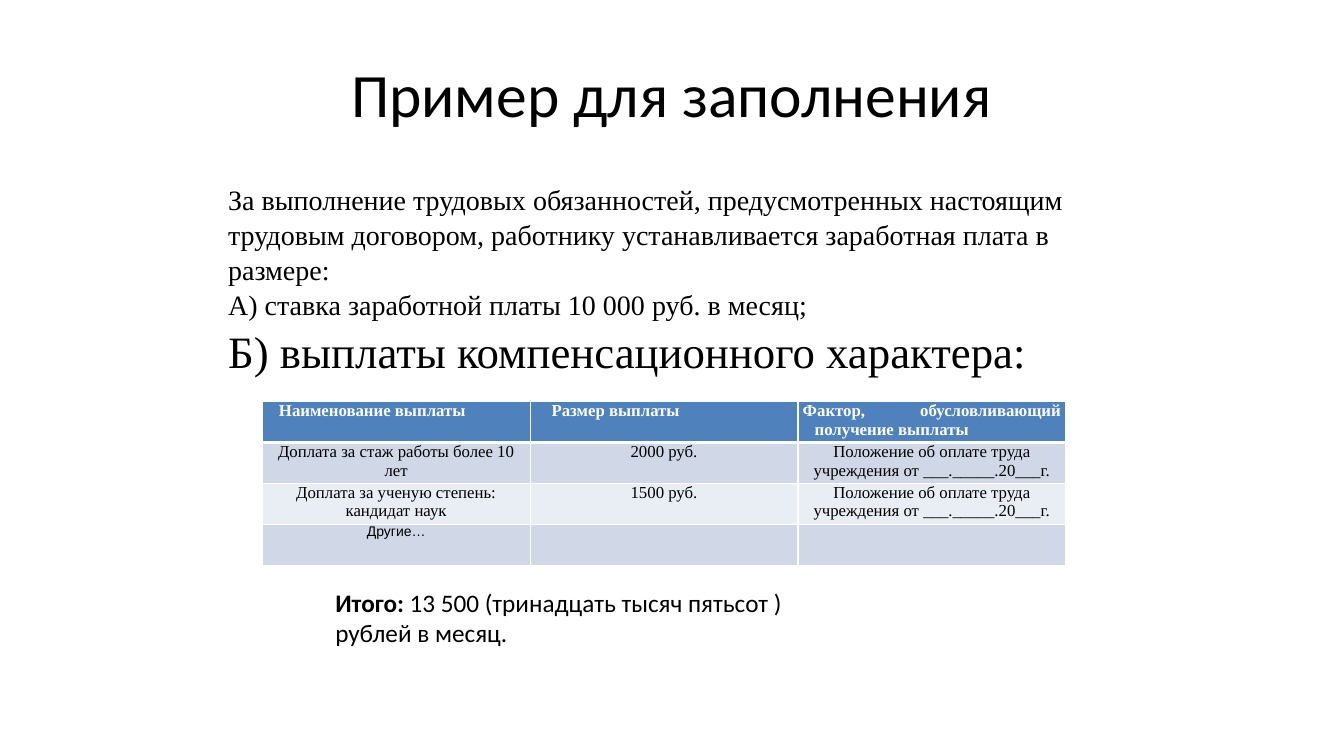
from lxml import etree
from pptx import Presentation
from pptx.dml.color import RGBColor
from pptx.enum.text import MSO_ANCHOR, PP_ALIGN
from pptx.oxml.ns import qn
from pptx.util import Cm, Pt

LEFT, CENTER, JUSTIFY = PP_ALIGN.LEFT, PP_ALIGN.CENTER, PP_ALIGN.JUSTIFY
TOP, MIDDLE = MSO_ANCHOR.TOP, MSO_ANCHOR.MIDDLE

BLACK = RGBColor(0x00, 0x00, 0x00)
WHITE = RGBColor(0xFF, 0xFF, 0xFF)
HEADER_BLUE = RGBColor(0x4F, 0x81, 0xBD)
BAND_DARK = RGBColor(0xD0, 0xD8, 0xE8)
BAND_LIGHT = RGBColor(0xE9, 0xED, 0xF4)

SERIF, SANS, ARIAL = "Times New Roman", "Calibri", "Arial"
REGULATION = "Положение об оплате труда учреждения от ___._____.20___г."
HEADINGS = [
    ("Наименование выплаты", 0.3, 0),
    ("Размер выплаты", 0.42, 0),
    ("Фактор, обусловливающий\nполучение выплаты", 0.3, -0.3),
]
PAYMENTS = [
    ("Доплата за стаж работы более 10 лет", "2000 руб.", REGULATION),
    ("Доплата за ученую степень: кандидат наук", "1500 руб.", REGULATION),
    ("Другие…", "", ""),
]
TERMS = [
    ("За выполнение трудовых обязанностей, предусмотренных настоящим "
     "трудовым договором, работнику устанавливается заработная плата в размере:", 20),
    ("А) ставка заработной платы 10 000 руб. в месяц;", 20),
    ("Б) выплаты компенсационного характера:", 32),
]


def add_run(paragraph, text, size, font, color=BLACK, bold=False):
    """Append a formatted run to the paragraph."""
    run = paragraph.add_run()
    run.text = text
    run.font.size = Pt(size)
    run.font.name = font
    run.font.color.rgb = color
    run.font.bold = bold


def add_text(slide, box, paragraphs, align=LEFT, anchor=TOP, spacing=1.0):
    """Add a wrapped text box whose paragraphs are lists of run arguments."""
    frame = slide.shapes.add_textbox(*(Cm(length) for length in box)).text_frame
    frame.word_wrap = True
    frame.vertical_anchor = anchor
    for index, runs in enumerate(paragraphs):
        paragraph = frame.add_paragraph() if index else frame.paragraphs[0]
        paragraph.alignment = align
        paragraph.line_spacing = spacing
        for run in runs:
            add_run(paragraph, *run)


def set_borders(cell, top, bottom):
    """Draw white cell borders with the given top and bottom widths."""
    properties = cell._tc.get_or_add_tcPr()
    sides = (("a:lnL", 1), ("a:lnR", 1), ("a:lnT", top), ("a:lnB", bottom))
    for index, (side, width) in enumerate(sides):
        line = etree.Element(qn(side), w=str(Pt(width)))
        fill = etree.SubElement(line, qn("a:solidFill"))
        etree.SubElement(fill, qn("a:srgbClr"), val=str(WHITE))
        properties.insert(index, line)


def style_cell(cell, fill, top=1, bottom=1):
    """Set the margins, fill and borders of a cell."""
    cell.margin_left = cell.margin_right = Cm(0.12)
    cell.margin_top = cell.margin_bottom = 0
    cell.fill.solid()
    cell.fill.fore_color.rgb = fill
    set_borders(cell, top, bottom)


def fill_heading(cell, text, margin, indent):
    """Write a justified white heading with its indents."""
    style_cell(cell, HEADER_BLUE, bottom=3)
    paragraph = cell.text_frame.paragraphs[0]
    paragraph.alignment = JUSTIFY
    properties = paragraph._p.get_or_add_pPr()
    properties.set("marL", str(Cm(margin)))
    properties.set("indent", str(Cm(indent)))
    for index, line in enumerate(text.split("\n")):
        if index:
            paragraph.add_line_break()
        add_run(paragraph, line, 12, SERIF, WHITE, True)


def add_payments(slide):
    """Add the table of compensation payments."""
    table = slide.shapes.add_table(
        len(PAYMENTS) + 1, len(HEADINGS), Cm(6.61), Cm(10.12), Cm(20.25), Cm(4.12)
    ).table
    for column, heading in enumerate(HEADINGS):
        fill_heading(table.cell(0, column), *heading)
    for row, payment in enumerate(PAYMENTS, start=1):
        last = row == len(PAYMENTS)
        for column, text in enumerate(payment):
            cell = table.cell(row, column)
            style_cell(cell, BAND_DARK if row % 2 else BAND_LIGHT, top=3 if row == 1 else 1)
            paragraph = cell.text_frame.paragraphs[0]
            paragraph.alignment = CENTER
            if text:
                add_run(paragraph, text, 10 if last else 12, ARIAL if last else SERIF)


def main():
    """Build and save the slide."""
    presentation = Presentation()
    presentation.slide_width, presentation.slide_height = Cm(33.87), Cm(19.05)
    slide = presentation.slides.add_slide(presentation.slide_layouts[6])
    add_text(slide, (1.69, 0.76, 30.48, 3.18),
             [[("Пример для заполнения", 44, SANS)]], CENTER, MIDDLE)
    add_text(slide, (5.5, 4.45, 22.86, 9.65),
             [[(text, size, SERIF)] for text, size in TERMS], spacing=1.04)
    add_payments(slide)
    add_text(slide, (8.2, 14.68, 12.7, 1.8),
             [[("Итого:", 18, SANS, BLACK, True),
               (" 13 500 (тринадцать тысяч пятьсот ) рублей в месяц.", 18, SANS)]])
    presentation.save("out.pptx")


if __name__ == "__main__":
    main()
